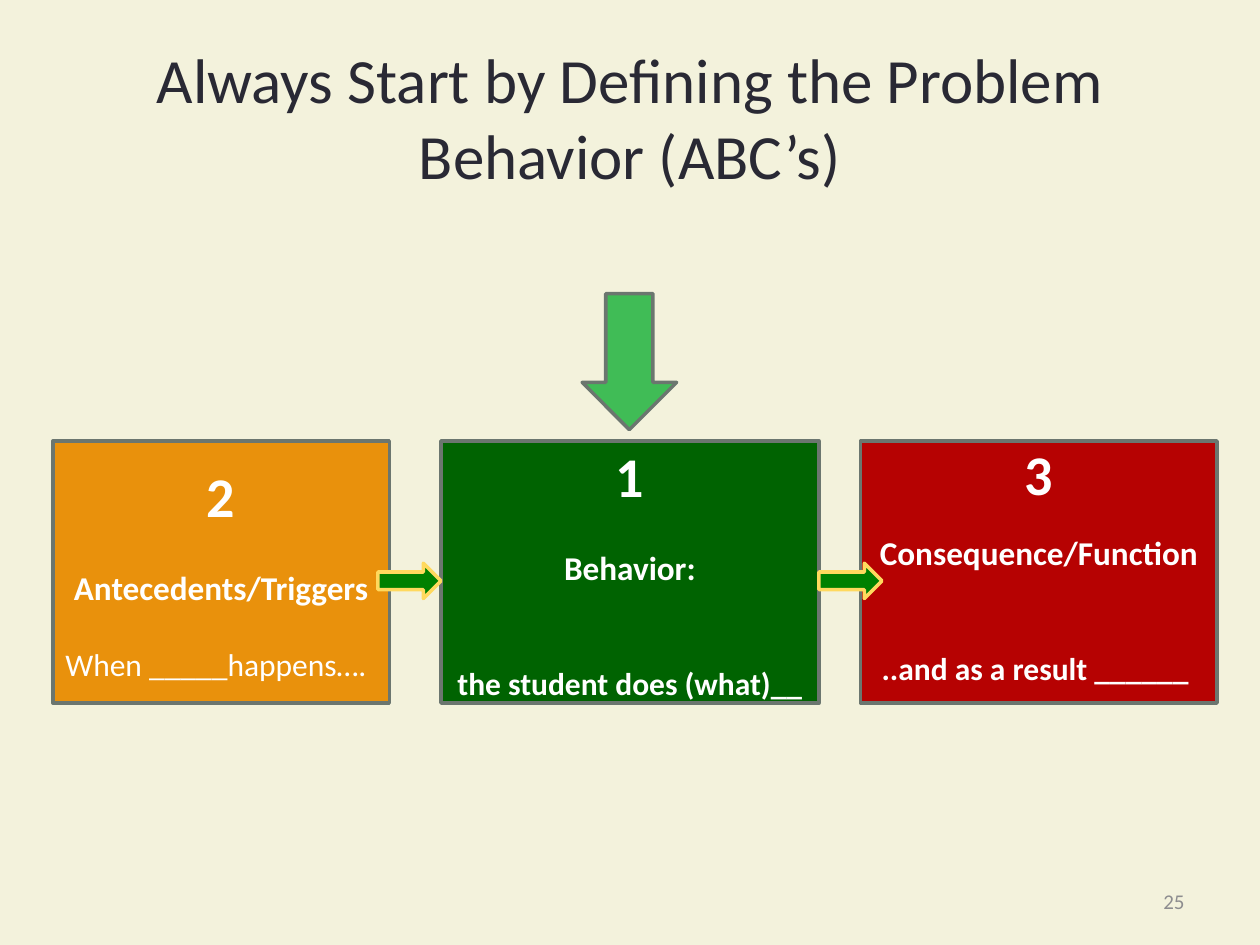
from pptx import Presentation
from pptx.dml.color import RGBColor
from pptx.enum.shapes import MSO_SHAPE as Shape
from pptx.enum.text import MSO_ANCHOR as Anchor, PP_ALIGN as Align
from pptx.util import Inches, Pt

FONT = "Calibri"
WHITE, GREY = "FFFFFF", "6B766F"
CARD_TOP, CARD_HEIGHT = 3.5, 2.08


def color(value):
    return RGBColor.from_string(value)


def style_paragraph(para, text, size, ink, bold=False, align=Align.CENTER, gap=0):
    para.text = text
    para.alignment = align
    para.space_before = Pt(gap)
    font = para.runs[0].font
    font.name, font.size, font.bold = FONT, Pt(size), bold
    font.color.rgb = color(ink)


def add_label(page, box, text, size, ink, align):
    frame = page.shapes.add_textbox(*map(Inches, box)).text_frame
    frame.word_wrap = True
    frame.vertical_anchor = Anchor.MIDDLE
    style_paragraph(frame.paragraphs[0], text, size, ink, align=align)


def add_block(page, kind, box, fill, line):
    block = page.shapes.add_shape(kind, *map(Inches, box))
    block.shadow.inherit = False
    block.fill.solid()
    block.fill.fore_color.rgb = color(fill)
    block.line.color.rgb = color(line)
    block.line.width = Pt(2)
    return block


def add_card(page, box, fill, lines, bottom_inset=0.05):
    """Each line is (text, size, bold, alignment, gap above in points)."""
    frame = add_block(page, Shape.RECTANGLE, box, fill, GREY).text_frame
    frame.word_wrap = True
    frame.vertical_anchor = Anchor.MIDDLE
    frame.margin_bottom = Inches(bottom_inset)
    for index, (text, size, bold, align, gap) in enumerate(lines):
        para = frame.add_paragraph() if index else frame.paragraphs[0]
        style_paragraph(para, text, size, WHITE, bold, align, gap)


def add_abc_row(page, top, height):
    # Antecedent, behavior and consequence cards
    add_card(page, (0.42, top, 2.67, height), "E9910C", [
        ("2", 32, True, Align.CENTER, 0),
        ("Antecedents/Triggers", 19, True, Align.CENTER, 22),
        ("When _____happens….", 18, False, Align.LEFT, 22),
    ])
    add_card(page, (3.5, top, 3, height), "006301", [
        ("1", 32, True, Align.CENTER, 0),
        ("Behavior:", 19, True, Align.CENTER, 22),
        ("the student does (what)__", 18, True, Align.CENTER, 44),
    ])
    add_card(page, (6.83, top, 2.83, height), "B60202", [
        ("3", 32, True, Align.CENTER, 0),
        ("Consequence/Function", 19, True, Align.CENTER, 14.5),
        ("..and as a result ______ ", 18, True, Align.CENTER, 44),
    ], bottom_inset=0.19)

    # Arrows between the cards
    for left in (3, 6.5):
        add_block(page, Shape.RIGHT_ARROW, (left, top + 0.97, 0.5, 0.28),
                  "008000", "FFD95E")

    # Arrow marking the starting card
    add_block(page, Shape.DOWN_ARROW, (4.62, top - 1.17, 0.75, 1.08),
              "40BC56", GREY)


def main():
    deck = Presentation()
    deck.slide_width, deck.slide_height = Inches(10), Inches(7.5)
    page = deck.slides.add_slide(deck.slide_layouts[6])
    page.background.fill.solid()
    page.background.fill.fore_color.rgb = color("F3F2DC")

    # Title, diagram and page number
    add_label(page, (0.5, 0.3, 9, 1.25),
              "Always Start by Defining the Problem Behavior (ABC’s)",
              36, "292934", Align.CENTER)
    add_abc_row(page, CARD_TOP, CARD_HEIGHT)
    add_label(page, (7.17, 6.95, 2.33, 0.4), "25", 12, "8D8D8F", Align.RIGHT)
    deck.save("out.pptx")


if __name__ == "__main__":
    main()
